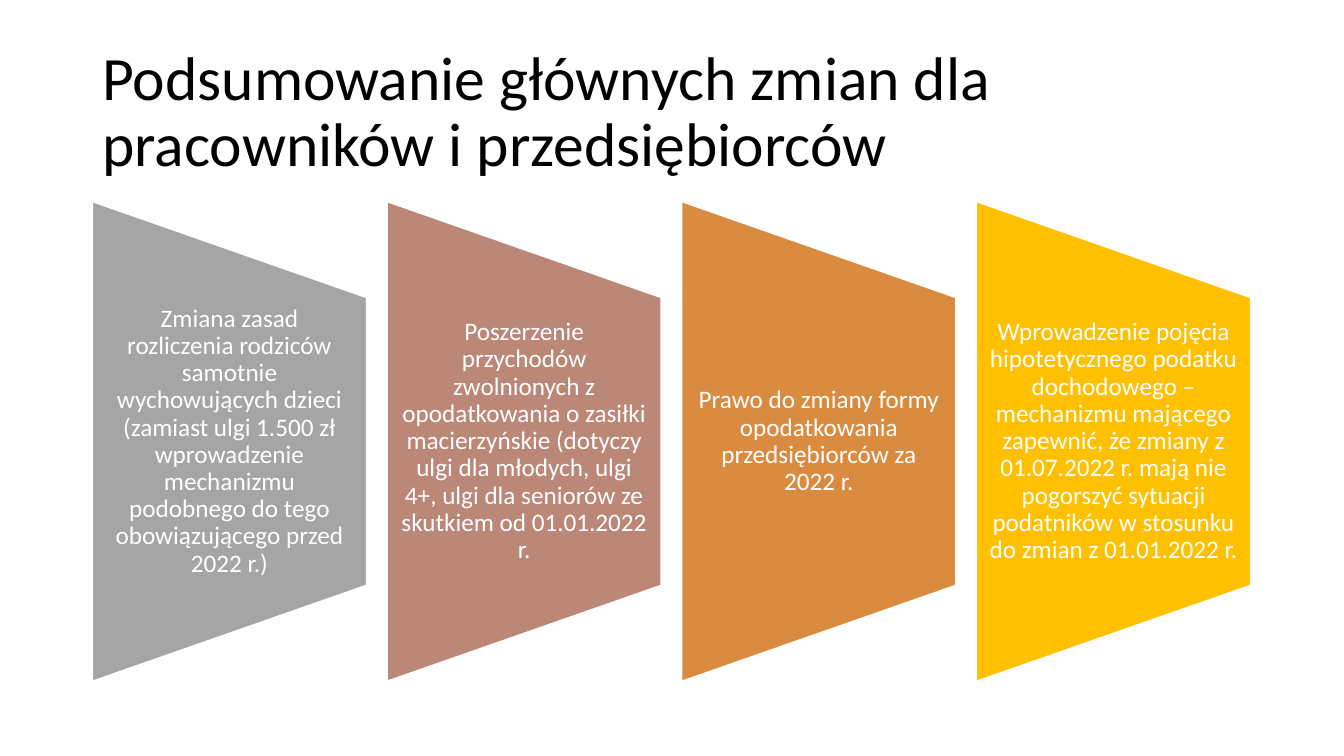
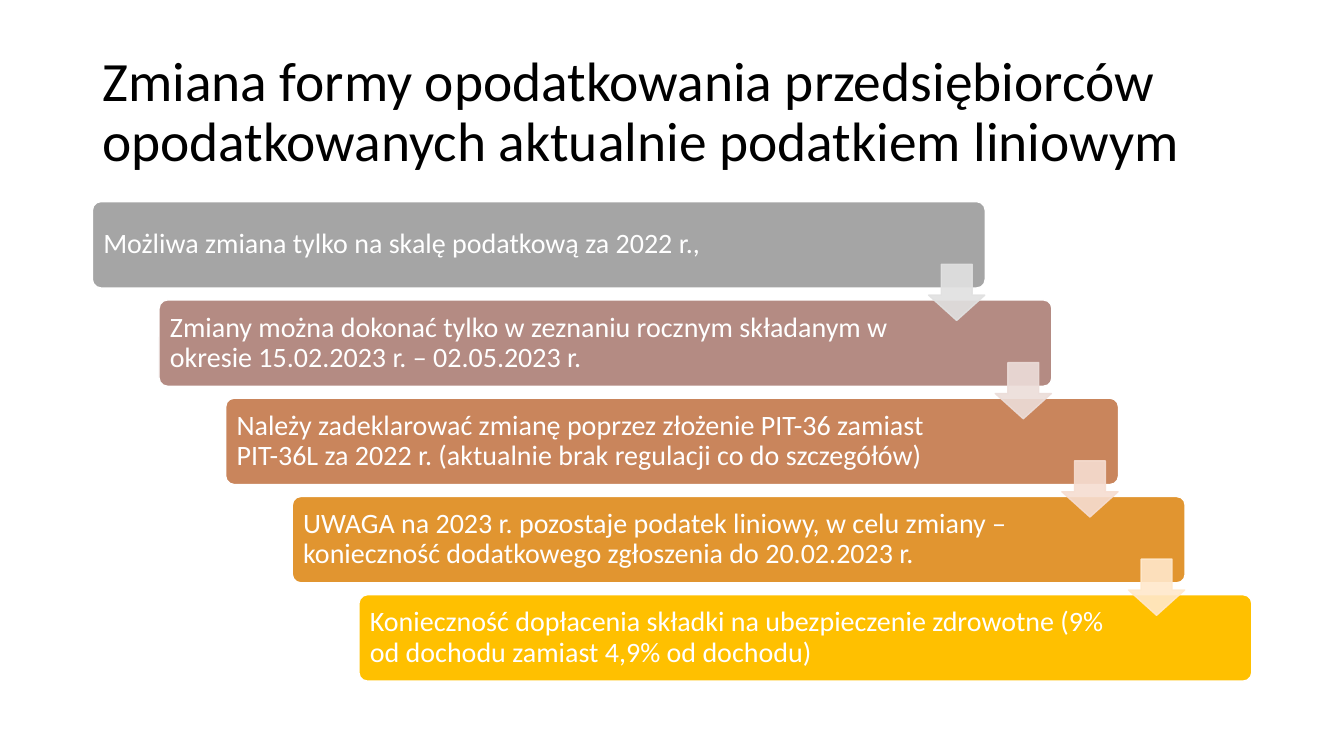
"""Build two slides on tax changes for employees and entrepreneurs."""
from typing import NamedTuple

from pptx import Presentation
from pptx.dml.color import RGBColor
from pptx.enum.shapes import MSO_SHAPE as SHAPE
from pptx.enum.text import MSO_ANCHOR as ANCHOR, PP_ALIGN as ALIGN
from pptx.oxml.ns import qn
from pptx.util import Pt
from lxml.etree import SubElement

WHITE = RGBColor(0xFF, 0xFF, 0xFF)
BLACK = RGBColor(0x00, 0x00, 0x00)
GREY = RGBColor(0xA5, 0xA5, 0xA5)
ROSE = RGBColor(0xBB, 0x87, 0x76)
OCHRE = RGBColor(0xD9, 0x8B, 0x3F)
GOLD = RGBColor(0xFF, 0xC0, 0x00)
MAUVE = RGBColor(0xB4, 0x8B, 0x83)
COPPER = RGBColor(0xC9, 0x85, 0x5C)
AMBER = RGBColor(0xE1, 0x95, 0x30)
PALE_GREY = RGBColor(0xE1, 0xE1, 0xE1)
PALE_MAUVE = RGBColor(0xEC, 0xDD, 0xD9)
PALE_COPPER = RGBColor(0xF6, 0xDD, 0xD1)
PALE_AMBER = RGBColor(0xFF, 0xE8, 0xCB)

FONT = "Calibri"
LEFT, TOP = 66, 144
PANEL_W, PANEL_H, PANEL_STEP = 195.8, 342.6, 210.5
PANEL_TEXT_H = 205.6
BAR_W, BAR_H, BAR_DX, BAR_DY = 637.8, 61.7, 47.6, 70.2
ARROW_X, ARROW_Y, ARROW_SIZE = 663.3, 188.8, 40.1
ARROW_ALPHA = 90


class Box(NamedTuple):
    x: float
    y: float
    w: float
    h: float


class Item(NamedTuple):
    text: str
    color: RGBColor


PANELS = [
    Item("Zmiana zasad rozliczenia rodziców samotnie wychowujących dzieci "
         "(zamiast ulgi 1.500 zł wprowadzenie mechanizmu podobnego do tego "
         "obowiązującego przed 2022 r.)", GREY),
    Item("Poszerzenie przychodów zwolnionych z opodatkowania o zasiłki "
         "macierzyńskie (dotyczy ulgi dla młodych, ulgi 4+, ulgi dla seniorów "
         "ze skutkiem od 01.01.2022 r.", ROSE),
    Item("Prawo do zmiany formy opodatkowania przedsiębiorców za 2022 r.", OCHRE),
    Item("Wprowadzenie pojęcia hipotetycznego podatku dochodowego – mechanizmu "
         "mającego zapewnić, że zmiany z 01.07.2022 r. mają nie pogorszyć "
         "sytuacji podatników w stosunku do zmian z 01.01.2022 r.", GOLD),
]
STEPS = [
    Item("Możliwa zmiana tylko na skalę podatkową za 2022 r.,", GREY),
    Item("Zmiany można dokonać tylko w zeznaniu rocznym składanym w okresie "
         "15.02.2023 r. – 02.05.2023 r.", MAUVE),
    Item("Należy zadeklarować zmianę poprzez złożenie PIT-36 zamiast PIT-36L "
         "za 2022 r. (aktualnie brak regulacji co do szczegółów)", COPPER),
    Item("UWAGA na 2023 r. pozostaje podatek liniowy, w celu zmiany – "
         "konieczność dodatkowego zgłoszenia do 20.02.2023 r.", AMBER),
    Item("Konieczność dopłacenia składki na ubezpieczenie zdrowotne (9% od "
         "dochodu zamiast 4,9% od dochodu)", GOLD),
]
ARROW_COLORS = [PALE_GREY, PALE_MAUVE, PALE_COPPER, PALE_AMBER]


def points(box: Box) -> list[Pt]:
    """Convert a box to lengths."""
    return [Pt(v) for v in box]


def write(sp, text: str, size: float, color: RGBColor, align: ALIGN,
          insets: Box) -> None:
    """Set wrapped, vertically centred text; insets run left, top, right, bottom."""
    tf = sp.text_frame
    tf.word_wrap = True
    tf.vertical_anchor = ANCHOR.MIDDLE
    (tf.margin_left, tf.margin_top,
     tf.margin_right, tf.margin_bottom) = points(insets)
    p = tf.paragraphs[0]
    p.text = text
    p.alignment = align
    p.line_spacing = 0.9
    p.font.name = FONT
    p.font.size = Pt(size)
    p.font.color.rgb = color


def add_shape(s, kind: SHAPE, box: Box, fill: RGBColor, line: RGBColor):
    """Add a flat filled shape with a one-point outline."""
    sp = s.shapes.add_shape(kind, *points(box))
    sp.shadow.inherit = False
    sp.fill.solid()
    sp.fill.fore_color.rgb = fill
    sp.line.color.rgb = line
    sp.line.width = Pt(1)
    return sp


def add_titled_slide(prs, title: str, size: float):
    """Add a blank slide with the shared title."""
    s = prs.slides.add_slide(prs.slide_layouts[6])
    sp = s.shapes.add_textbox(*points(Box(LEFT, 28.8, 828, 104.4)))
    write(sp, title, size, BLACK, ALIGN.LEFT, Box(7.2, 3.6, 7.2, 3.6))
    return s


def add_panel(s, i: int, item: Item) -> None:
    """Add a trapezoid turned on its side, with upright text over it."""
    x, mid = LEFT + i * PANEL_STEP, TOP + PANEL_H / 2
    box = Box(x + (PANEL_W - PANEL_H) / 2, mid - PANEL_W / 2, PANEL_H, PANEL_W)
    sp = add_shape(s, SHAPE.FLOWCHART_MANUAL_OPERATION, box, item.color, WHITE)
    sp.rotation = 270
    label = s.shapes.add_textbox(
        *points(Box(x, mid - PANEL_TEXT_H / 2, PANEL_W, PANEL_TEXT_H)))
    write(label, item.text, 18, WHITE, ALIGN.CENTER, Box(9, 0, 9, 0))


def add_step(s, i: int, item: Item) -> None:
    """Add one bar of the staircase."""
    box = Box(LEFT + i * BAR_DX, TOP + i * BAR_DY, BAR_W, BAR_H)
    sp = add_shape(s, SHAPE.ROUNDED_RECTANGLE, box, item.color, WHITE)
    sp.adjustments[0] = 0.1
    write(sp, item.text, 20, WHITE, ALIGN.LEFT, Box(6, 6, 93.8, 6))


def add_arrow(s, i: int, color: RGBColor) -> None:
    """Add a translucent arrow leading to the next bar."""
    box = Box(ARROW_X + i * BAR_DX, ARROW_Y + i * BAR_DY, ARROW_SIZE, ARROW_SIZE)
    sp = add_shape(s, SHAPE.DOWN_ARROW, box, color, color)
    sp.adjustments[0], sp.adjustments[1] = 0.55, 0.45
    for clr in sp._element.spPr.iter(qn("a:srgbClr")):
        SubElement(clr, qn("a:alpha"), val=str(ARROW_ALPHA * 1000))


def main() -> None:
    """Build and save the presentation."""
    prs = Presentation()
    prs.slide_width, prs.slide_height = Pt(960), Pt(540)

    s = add_titled_slide(
        prs, "Podsumowanie głównych zmian dla pracowników i przedsiębiorców", 44)
    for i, item in enumerate(PANELS):
        add_panel(s, i, item)

    s = add_titled_slide(
        prs, "Zmiana formy opodatkowania przedsiębiorców opodatkowanych "
        "aktualnie podatkiem liniowym", 39.6)
    for i, item in enumerate(STEPS):
        add_step(s, i, item)
    for i, color in enumerate(ARROW_COLORS):
        add_arrow(s, i, color)

    prs.save("out.pptx")


if __name__ == "__main__":
    main()
